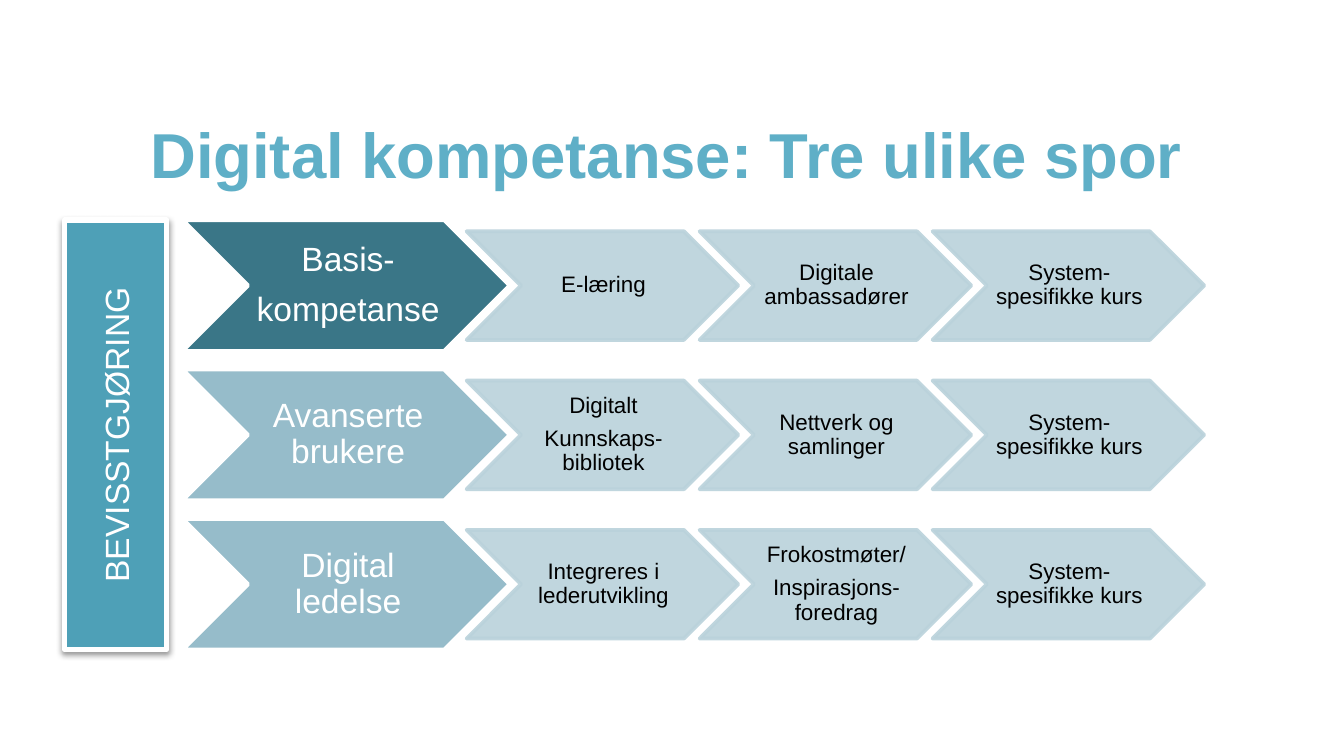
from pptx import Presentation
from pptx.dml.color import RGBColor
from pptx.enum.shapes import MSO_SHAPE as SHAPE
from pptx.enum.text import MSO_ANCHOR as ANCHOR, PP_ALIGN as ALIGN
from pptx.oxml import parse_xml
from pptx.oxml.ns import nsdecls
from pptx.util import Pt

TITLE = "Digital kompetanse: Tre ulike spor"
BAR_LABEL = "BEVISSTGJØRING"
# Each track: heading colour, heading, steps; every text is a list of paragraphs
TRACKS = [
    ("dark", ["Basis-", "kompetanse"],
     [["E-læring"], ["Digitale ambassadører"], ["System-spesifikke kurs"]]),
    ("mid", ["Avanserte brukere"],
     [["Digitalt", "Kunnskaps-bibliotek"], ["Nettverk og samlinger"],
      ["System-spesifikke kurs"]]),
    ("mid", ["Digital ledelse"],
     [["Integreres i lederutvikling"], ["Frokostmøter/", "Inspirasjons-foredrag"],
      ["System-spesifikke kurs"]]),
]
COLORS = {"title": "5FAFC7", "bar": "4EA0B7", "dark": "3A7687", "mid": "96BCCA",
          "step": "BAD2DB", "white": "FFFFFF", "black": "000000"}

TOP, ROW_PITCH = 118, 80
HEAD_X, HEAD_W, HEAD_H = 98, 175, 70
STEP_X, STEP_W, STEP_H, STEP_PITCH = 250, 145.5, 58.2, 124.8
BAR_X, BAR_W = 34.6, 54.7


def rgb(name):
    return RGBColor.from_string(COLORS[name])


def set_text(s, paragraphs, size, color, bold=False, align=ALIGN.CENTER,
             anchor=ANCHOR.MIDDLE, spacing=None, after=0, insets=None):
    tf = s.text_frame
    tf.word_wrap = True
    tf.vertical_anchor = anchor
    if insets:
        (tf.margin_left, tf.margin_top,
         tf.margin_right, tf.margin_bottom) = [Pt(v) for v in insets]
    for i, text in enumerate(paragraphs):
        p = tf.paragraphs[0] if i == 0 else tf.add_paragraph()
        p.alignment = align
        p.line_spacing = spacing
        p.space_after = Pt(after)
        r = p.add_run()
        r.text = text
        r.font.name, r.font.size, r.font.bold = "Arial", Pt(size), bold
        r.font.color.rgb = rgb(color)


def add_box(shapes, kind, x, y, w, h, fill, line, line_width):
    s = shapes.add_shape(kind, Pt(x), Pt(y), Pt(w), Pt(h))
    s.shadow.inherit = False
    s.fill.solid()
    s.fill.fore_color.rgb = rgb(fill)
    s.line.color.rgb = rgb(line)
    s.line.width = Pt(line_width)
    return s


def set_opacity(s, percent):
    """Make both the fill and the line of a shape partly transparent."""
    for color in s._element.spPr.xpath(".//a:srgbClr"):
        color.append(parse_xml(f'<a:alpha {nsdecls("a")} val="{percent * 1000}"/>'))


def add_shadow(s, color, opacity, blur, distance):
    """Add a soft shadow that falls straight down."""
    effects = s._element.spPr.xpath("./a:effectLst")[0]
    effects.append(parse_xml(
        f'<a:outerShdw {nsdecls("a")} blurRad="{Pt(blur)}" dist="{Pt(distance)}" '
        f'dir="5400000" rotWithShape="0"><a:srgbClr val="{COLORS[color]}">'
        f'<a:alpha val="{opacity * 1000}"/></a:srgbClr></a:outerShdw>'))


def add_chevron(shapes, x, y, w, h, paragraphs, size, color, fill, line, left_inset):
    s = add_box(shapes, SHAPE.CHEVRON, x, y, w, h, fill, line, 2)
    set_text(s, paragraphs, size, color, spacing=0.9, after=size * 0.4,
             insets=(left_inset, 0.7, 0, 0.7))
    return s


def add_track(shapes, y, head_fill, heading, steps):
    add_chevron(shapes, HEAD_X, y, HEAD_W, HEAD_H, heading, 18, "white",
                head_fill, "white", 2)
    step_y = y + (HEAD_H - STEP_H) / 2
    for col, step in enumerate(steps):
        s = add_chevron(shapes, STEP_X + col * STEP_PITCH, step_y, STEP_W, STEP_H,
                        step, 12, "black", "step", "step", 1.2)
        set_opacity(s, 90)


def main():
    prs = Presentation()
    prs.slide_width, prs.slide_height = Pt(720), Pt(405)
    shapes = prs.slides.add_slide(prs.slide_layouts[6]).shapes

    title = shapes.add_textbox(Pt(80.6), Pt(63.4), Pt(563), Pt(38.9))
    set_text(title, [TITLE], 34, "title", bold=True, align=ALIGN.LEFT,
             anchor=ANCHOR.BOTTOM, spacing=Pt(43.2), insets=(0, 0, 0, 0))

    for row, track in enumerate(TRACKS):
        add_track(shapes, TOP + row * ROW_PITCH, *track)

    bar_h = (len(TRACKS) - 1) * ROW_PITCH + HEAD_H
    bar = add_box(shapes, SHAPE.RECTANGLE, BAR_X, TOP, BAR_W, bar_h, "bar", "white", 3)
    add_shadow(bar, "black", 38, 3.1, 1.6)
    set_text(bar, [BAR_LABEL], 18, "white")
    bar.text_frame._txBody.bodyPr.set("vert", "vert270")

    prs.save("out.pptx")


if __name__ == "__main__":
    main()
